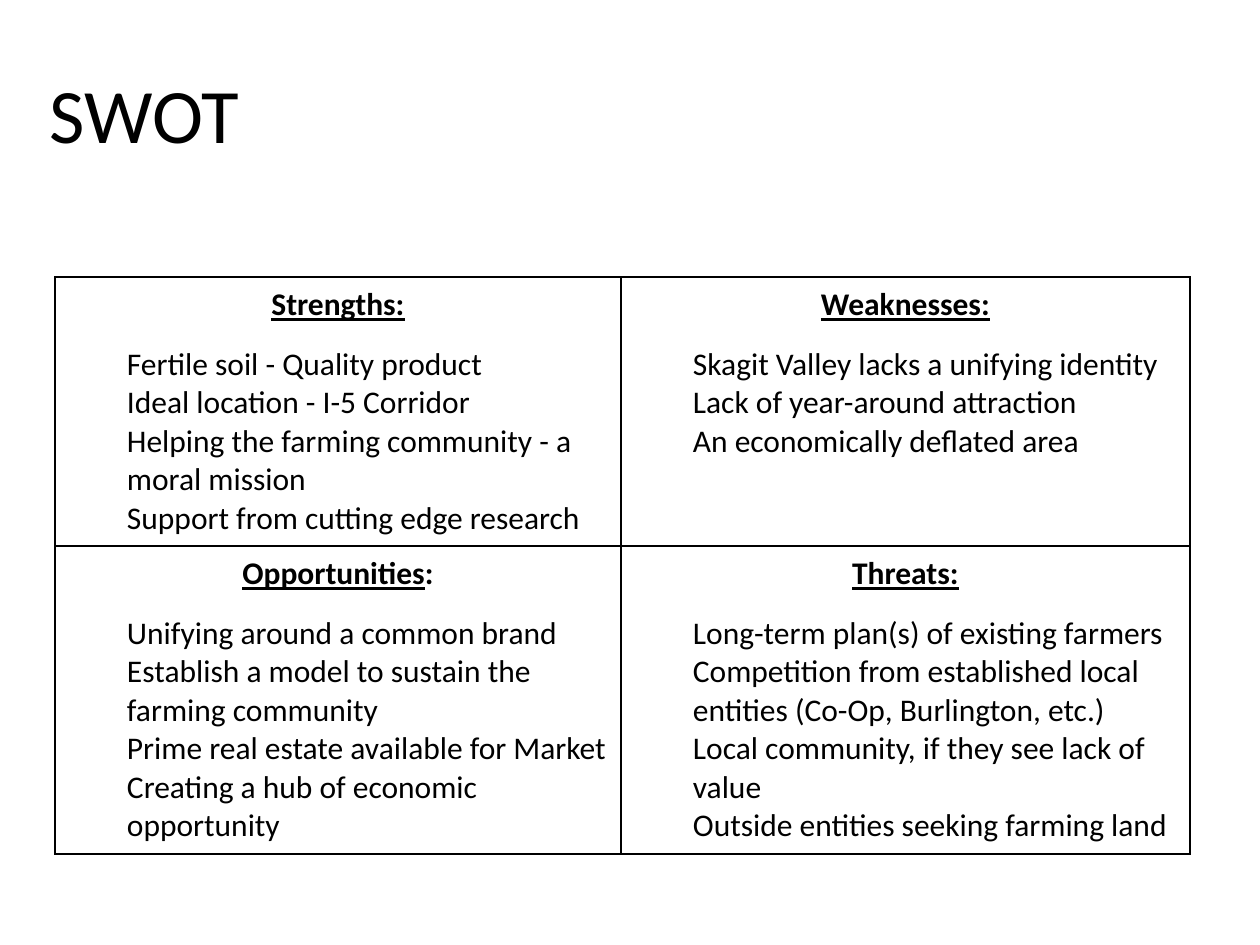
from dataclasses import dataclass

from lxml.etree import SubElement
from pptx import Presentation
from pptx.dml.color import RGBColor as Rgb
from pptx.enum.text import MSO_ANCHOR as Anchor, PP_ALIGN as Align
from pptx.oxml.ns import qn
from pptx.util import Emu, Pt

EMU_PER_PX = 914400 / 126


@dataclass(frozen=True)
class Theme:
    font: str = "Calibri"
    ink: str = "000000"
    title_size: int = 44
    body_size: int = 18
    heading_gap: int = 12
    border_width: int = 1


@dataclass(frozen=True)
class Quadrant:
    heading: str
    points: tuple[str, ...]
    plain_tail: str = ""


THEME = Theme()
COLUMN_WIDTHS = (566, 569)
ROW_HEIGHTS = (269, 308)
CELL_MARGIN = 9
POINT_INDENT = 63

QUADRANTS = (
    (
        Quadrant("Strengths:", (
            "Fertile soil - Quality product",
            "Ideal location - I-5 Corridor",
            "Helping the farming community - a moral mission",
            "Support from cutting edge research",
        )),
        Quadrant("Weaknesses:", (
            "Skagit Valley lacks a unifying identity",
            "Lack of year-around attraction",
            "An economically deflated area",
        )),
    ),
    (
        Quadrant("Opportunities", (
            "Unifying around a common brand",
            "Establish a model to sustain the farming community",
            "Prime real estate available for Market",
            "Creating a hub of economic opportunity",
        ), plain_tail=":"),
        Quadrant("Threats:", (
            "Long-term plan(s) of existing farmers",
            "Competition from established local entities (Co-Op, Burlington, etc.)",
            "Local community, if they see lack of value",
            "Outside entities seeking farming land",
        )),
    ),
)


def px(length: int) -> Emu:
    return Emu(round(length * EMU_PER_PX))


def style_font(para, size: int, bold: bool = False) -> None:
    font = para.font
    font.name, font.size, font.bold = THEME.font, Pt(size), bold
    font.color.rgb = Rgb.from_string(THEME.ink)


def set_margins(target, margin: int) -> None:
    """Set equal insets on a cell or a text frame."""
    target.margin_left = target.margin_right = px(margin)
    target.margin_top = target.margin_bottom = px(margin)


def add_title(page, text: str) -> None:
    frame = page.shapes.add_textbox(px(37), px(64), px(1174), px(79)).text_frame
    frame.word_wrap = True
    frame.vertical_anchor = Anchor.TOP
    set_margins(frame, 13)
    para = frame.paragraphs[0]
    para.text = text
    para.line_spacing = 0.9
    style_font(para, THEME.title_size)


def draw_borders(cell) -> None:
    properties = cell._tc.get_or_add_tcPr()
    for side in ("a:lnL", "a:lnR", "a:lnT", "a:lnB"):
        line = SubElement(properties, qn(side), w=str(Pt(THEME.border_width)))
        fill = SubElement(line, qn("a:solidFill"))
        SubElement(fill, qn("a:srgbClr"), val=THEME.ink)


def fill_cell(cell, quadrant: Quadrant) -> None:
    draw_borders(cell)
    cell.fill.background()
    set_margins(cell, CELL_MARGIN)
    frame = cell.text_frame

    heading = frame.paragraphs[0]
    heading.alignment = Align.CENTER
    heading.space_after = Pt(THEME.heading_gap)
    style_font(heading, THEME.body_size, bold=True)
    span = heading.add_run()
    span.text = quadrant.heading
    span.font.underline = True
    if quadrant.plain_tail:
        heading.add_run().text = quadrant.plain_tail

    for point in quadrant.points:
        para = frame.add_paragraph()
        para.text = point
        para._p.get_or_add_pPr().set("marL", str(px(POINT_INDENT)))
        style_font(para, THEME.body_size)


def add_swot_table(page) -> None:
    table = page.shapes.add_table(
        len(ROW_HEIGHTS), len(COLUMN_WIDTHS), px(55), px(277),
        px(sum(COLUMN_WIDTHS)), px(sum(ROW_HEIGHTS)),
    ).table
    table.first_row = table.horz_banding = False
    for column, width in zip(table.columns, COLUMN_WIDTHS):
        column.width = px(width)
    for row, height, quadrants in zip(table.rows, ROW_HEIGHTS, QUADRANTS):
        row.height = px(height)
        for cell, quadrant in zip(row.cells, quadrants):
            fill_cell(cell, quadrant)


def main() -> None:
    deck = Presentation()
    deck.slide_width, deck.slide_height = px(1260), px(945)
    page = deck.slides.add_slide(deck.slide_layouts[6])
    add_title(page, "SWOT")
    add_swot_table(page)
    deck.save("out.pptx")


if __name__ == "__main__":
    main()
